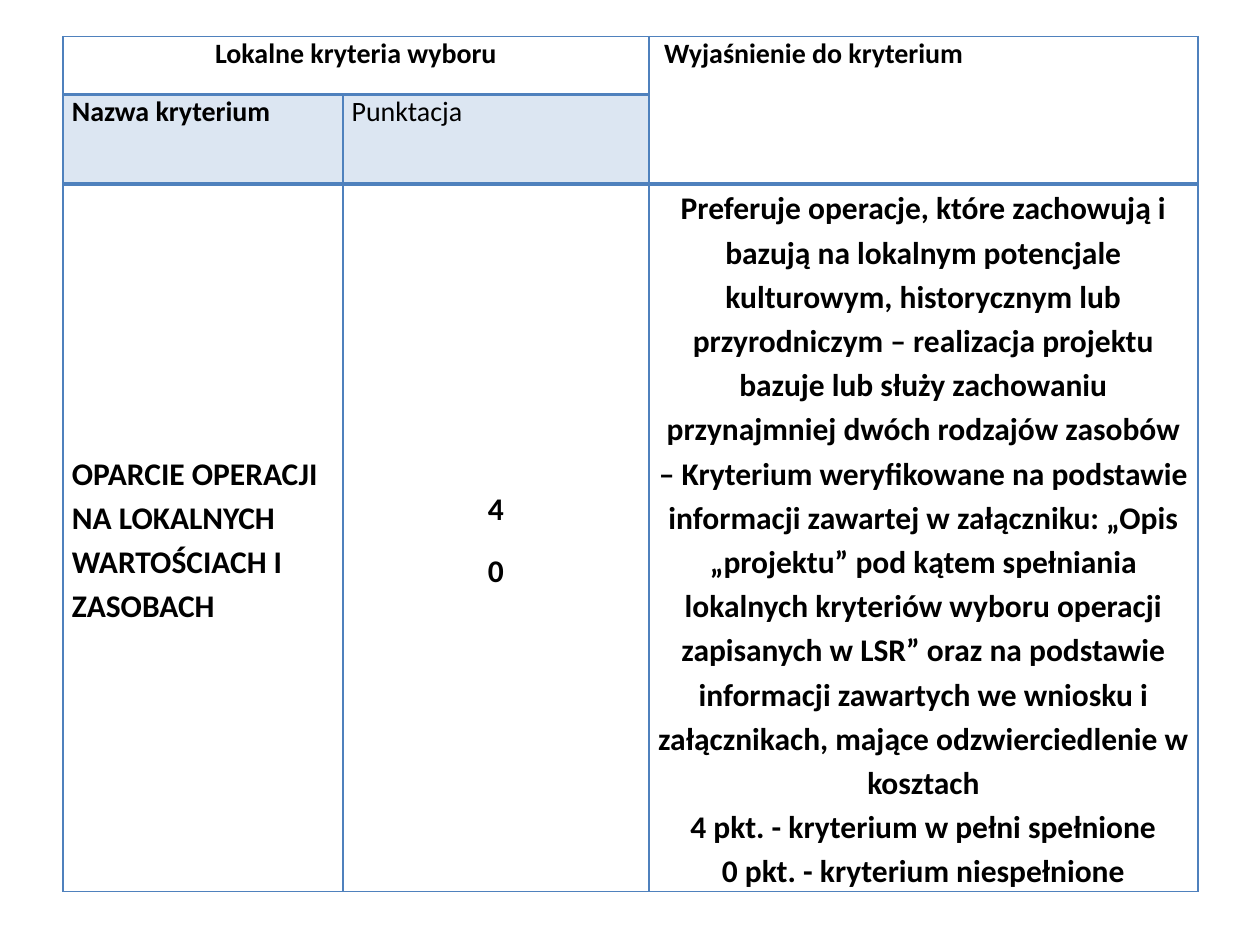
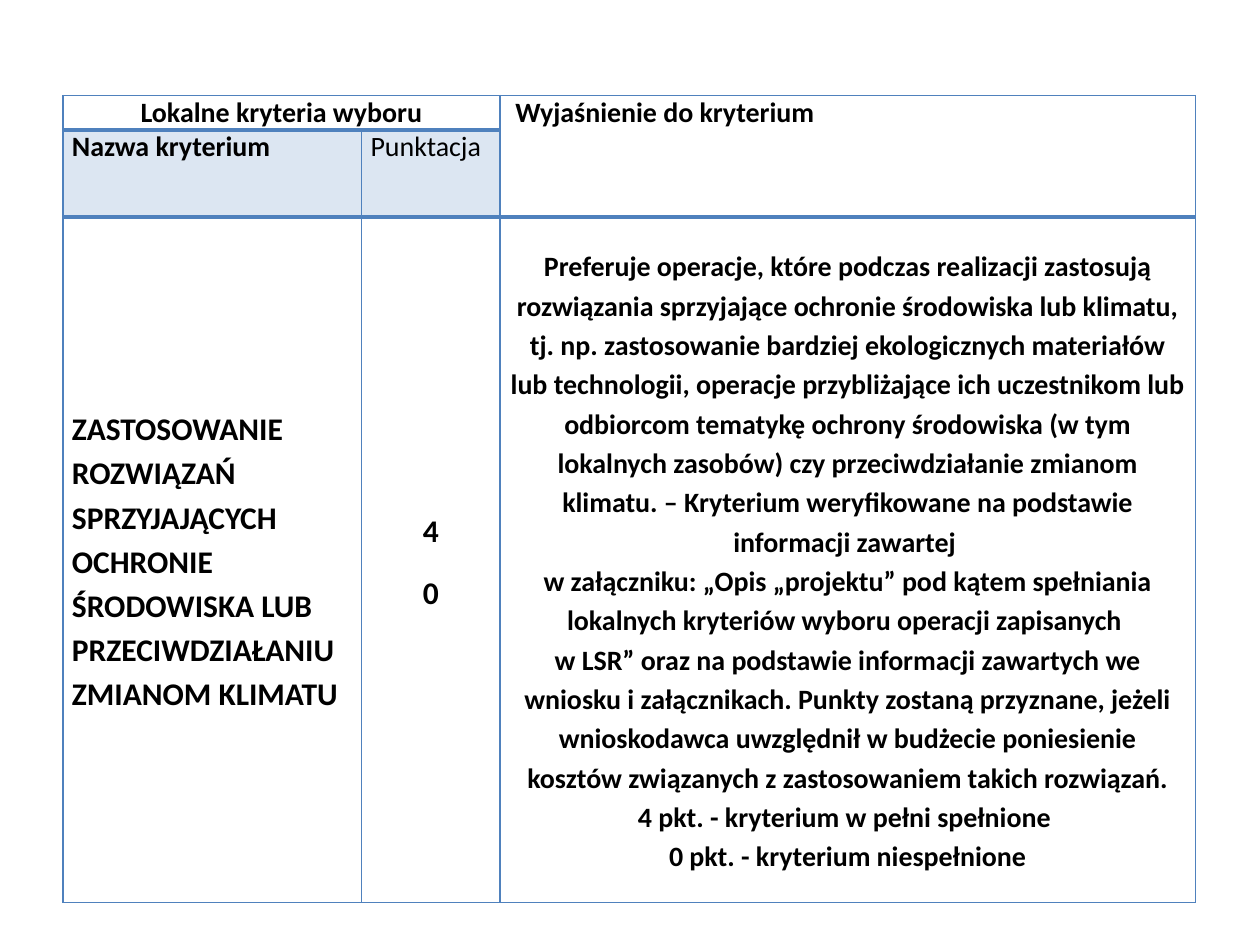
from lxml import etree
from pptx import Presentation
from pptx import util as u
from pptx.dml.color import RGBColor
from pptx.enum import text
from pptx.oxml.ns import qn

BLUE, PALE, WHITE, BLACK = "4F81BD", "DCE6F2", "FFFFFF", "000000"
LEFT, CENTRE = text.PP_ALIGN.LEFT, text.PP_ALIGN.CENTER
SIDES = ("L", "R", "T", "B")
MARGINS = {"margin_left": u.Cm(0.18), "margin_right": u.Cm(0.18),
           "margin_top": 0, "margin_bottom": 0}
HEADER = {"size": u.Pt(16), "bold": True}
HEADER_PLAIN = {"size": u.Pt(16), "bold": False}
BODY = {"size": u.Pt(18), "bold": True}
BODY_SMALL = {"size": u.Pt(16), "bold": True}
SPACING = {"line_spacing": 1.15}
SCORE_SPACING = {"line_spacing": 1.15, "space_after": u.Pt(10)}

CRITERIA = [
    {
        "top": 0.74,
        "columns": (5.64, 6.17, 11.07),
        "rows": (1.17, 1.8, 13.44),
        "name": "OPARCIE OPERACJI NA LOKALNYCH WARTOŚCIACH I ZASOBACH",
        "explanation": [
            "Preferuje operacje, które zachowują i bazują na lokalnym potencjale "
            "kulturowym, historycznym lub przyrodniczym – realizacja projektu bazuje "
            "lub służy zachowaniu przynajmniej dwóch rodzajów zasobów – Kryterium "
            "weryfikowane na podstawie informacji zawartej w załączniku: „Opis "
            "„projektu” pod kątem spełniania lokalnych kryteriów wyboru operacji "
            "zapisanych w LSR” oraz na podstawie informacji zawartych we wniosku i "
            "załącznikach, mające odzwierciedlenie w kosztach\n"
            "4 pkt. - kryterium w pełni spełnione",
            "0 pkt. - kryterium niespełnione",
        ],
        "explanation_font": BODY,
    },
    {
        "top": 1.93,
        "columns": (6.02, 2.79, 14.02),
        "rows": (0.69, 1.75, 13.82),
        "name": "ZASTOSOWANIE ROZWIĄZAŃ SPRZYJAJĄCYCH OCHRONIE ŚRODOWISKA LUB "
                "PRZECIWDZIAŁANIU ZMIANOM KLIMATU",
        "explanation": [
            "Preferuje operacje, które podczas realizacji zastosują rozwiązania "
            "sprzyjające ochronie środowiska lub klimatu, tj. np. zastosowanie "
            "bardziej ekologicznych materiałów lub technologii, operacje "
            "przybliżające ich uczestnikom lub odbiorcom tematykę ochrony środowiska "
            "(w tym lokalnych zasobów) czy przeciwdziałanie zmianom klimatu. – "
            "Kryterium weryfikowane na podstawie informacji zawartej \n"
            "w załączniku: „Opis „projektu” pod kątem spełniania lokalnych kryteriów "
            "wyboru operacji zapisanych \n"
            "w LSR” oraz na podstawie informacji zawartych we wniosku i "
            "załącznikach. Punkty zostaną przyznane, jeżeli wnioskodawca uwzględnił "
            "w budżecie poniesienie kosztów związanych z zastosowaniem takich "
            "rozwiązań.",
            "4 pkt. - kryterium w pełni spełnione \n0 pkt. - kryterium niespełnione",
        ],
        "explanation_font": BODY_SMALL,
    },
]


def colour(value):
    return RGBColor.from_string(value)


def apply(target, values):
    for name, value in values.items():
        setattr(target, name, value)


class CriteriaDeck:
    font = "Calibri"

    def __init__(self):
        self.deck = Presentation()
        self.deck.slide_width, self.deck.slide_height = u.Cm(25.4), u.Cm(19.05)
        self.page = None

    def new_page(self):
        self.page = self.deck.slides.add_slide(self.deck.slide_layouts[6])

    def table(self, top, columns, rows):
        frame = self.page.shapes.add_table(
            len(rows), len(columns), u.Cm(1.27), u.Cm(top),
            u.Cm(sum(columns)), u.Cm(sum(rows)))
        table = frame.table
        apply(table, {"first_row": False, "horz_banding": False})
        for column, width in zip(table.columns, columns):
            column.width = u.Cm(width)
        for row, height in zip(table.rows, rows):
            row.height = u.Cm(height)
        table.cell(0, 0).merge(table.cell(0, 1))
        table.cell(0, 2).merge(table.cell(1, 2))
        for r in range(len(rows)):
            for c in range(len(columns)):
                self.borders(table.cell(r, c), self.line_widths(r, c))
                shaded = r == 1 and c < 2
                self.fill(table.cell(r, c), PALE if shaded else WHITE)
        return table

    def line_widths(self, row, column):
        widths = dict.fromkeys(SIDES, 1)
        if row == 0:
            widths["B"] = 2 if column < 2 else 3
        elif row == 1:
            widths.update(T=2 if column < 2 else 1, B=3)
        else:
            widths["T"] = 3
        return widths

    def borders(self, cell, widths):
        properties = cell._tc.get_or_add_tcPr()
        for side, width in widths.items():
            line = etree.SubElement(properties, qn(f"a:ln{side}"), w=str(u.Pt(width)))
            fill = etree.SubElement(line, qn("a:solidFill"))
            etree.SubElement(fill, qn("a:srgbClr"), val=BLUE)

    def fill(self, cell, value):
        cell.fill.solid()
        cell.fill.fore_color.rgb = colour(value)

    def cell_text(self, cell, lines, font, align=LEFT, spacing=None, middle=False):
        apply(cell, MARGINS)
        if middle:
            cell.vertical_anchor = text.MSO_ANCHOR.MIDDLE
        for index, line in enumerate(lines):
            frame = cell.text_frame
            para = frame.add_paragraph() if index else frame.paragraphs[0]
            para.text = line
            apply(para, {"alignment": align, **(spacing or {})})
            for span in para.runs:
                apply(span.font, {"name": self.font, **font})
                span.font.color.rgb = colour(BLACK)
            for line_break in para._p.findall(qn("a:br")):
                etree.SubElement(line_break, qn("a:rPr"),
                                 sz=str(int(font["size"].pt * 100)))

    def criterion(self, top, columns, rows, name, explanation, explanation_font):
        self.new_page()
        table = self.table(top, columns, rows)
        self.cell_text(table.cell(0, 0), ["Lokalne kryteria wyboru"], HEADER, CENTRE)
        self.cell_text(table.cell(0, 2), [" Wyjaśnienie do kryterium"], HEADER)
        self.cell_text(table.cell(1, 0), ["Nazwa kryterium"], HEADER)
        self.cell_text(table.cell(1, 1), ["Punktacja"], HEADER_PLAIN)
        self.cell_text(table.cell(2, 0), [name], BODY, LEFT, SPACING, True)
        self.cell_text(table.cell(2, 1), ["4", "0"], BODY, CENTRE, SCORE_SPACING, True)
        self.cell_text(table.cell(2, 2), explanation, explanation_font,
                       CENTRE, SPACING, True)


def main():
    slides = CriteriaDeck()
    for criterion in CRITERIA:
        slides.criterion(**criterion)
    slides.deck.save("out.pptx")


if __name__ == "__main__":
    main()
